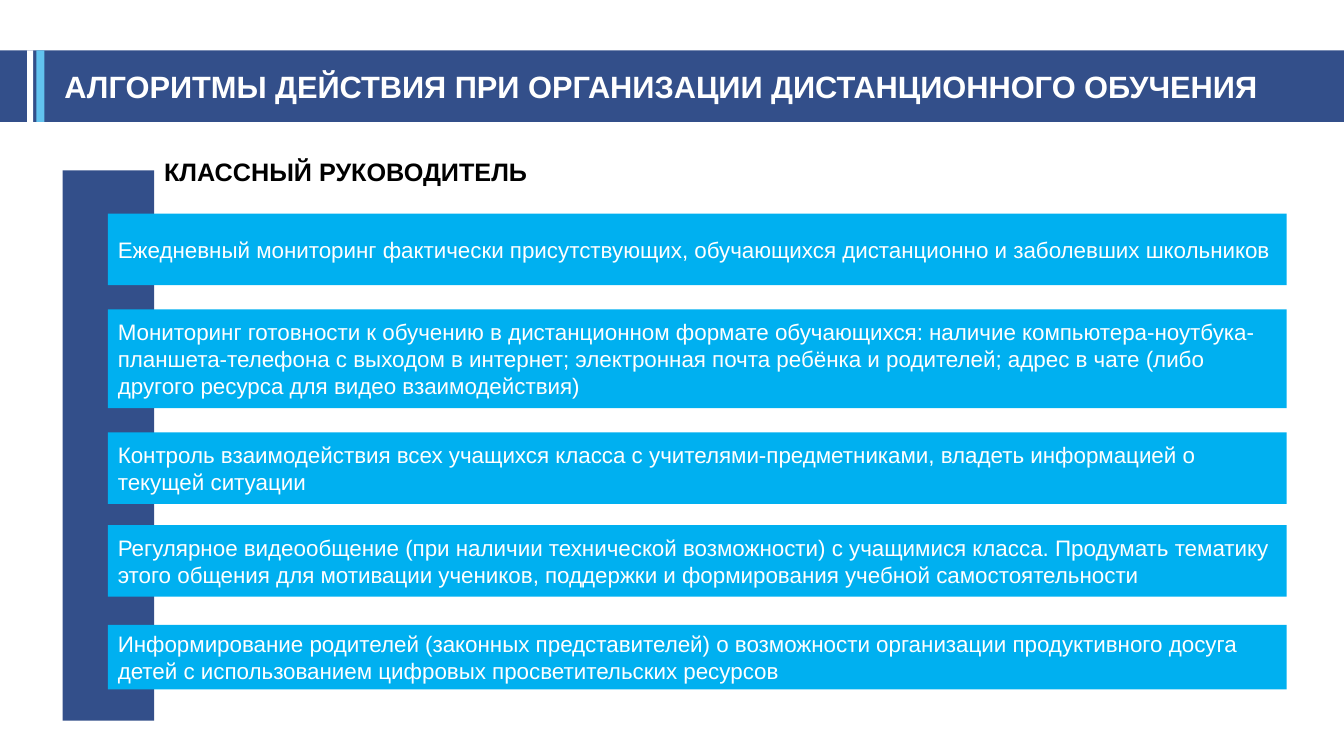
from dataclasses import dataclass
from typing import Optional

from pptx import Presentation
from pptx.dml.color import RGBColor
from pptx.enum.shapes import MSO_SHAPE as Shape
from pptx.enum.text import MSO_ANCHOR as Anchor, MSO_AUTO_SIZE as AutoSize, PP_ALIGN as Align
from pptx.util import Inches, Pt


@dataclass(frozen=True)
class Theme:
    font: str = "Arial"
    navy: RGBColor = RGBColor(0x33, 0x4F, 0x8A)
    accent: RGBColor = RGBColor(0x62, 0xC3, 0xEF)
    task: RGBColor = RGBColor(0x00, 0xB0, 0xF0)
    white: RGBColor = RGBColor(0xFF, 0xFF, 0xFF)
    black: RGBColor = RGBColor(0x00, 0x00, 0x00)
    title_size: int = 22
    role_size: int = 18
    task_size: int = 16


@dataclass(frozen=True)
class Block:
    left: float
    top: float
    width: float
    height: float
    color: RGBColor
    text: Optional[str] = None


THEME = Theme()
SLIDE_WIDTH = 13.33
BAND_TOP, BAND_HEIGHT = 0.5, 0.71
TASK_LEFT, TASK_WIDTH = 1.07, 11.69

BAND = Block(0, BAND_TOP, SLIDE_WIDTH, BAND_HEIGHT, THEME.navy)
STRIPES = [
    Block(0.36, BAND_TOP, 0.08, BAND_HEIGHT, THEME.accent),
    Block(0.27, BAND_TOP, 0.06, BAND_HEIGHT, THEME.white),
]
SPINE = Block(0.62, 1.69, 0.91, 5.46, THEME.navy)

# Top, height and wording of each task
TASKS = [
    (2.12, 0.71, "Ежедневный мониторинг фактически присутствующих, обучающихся "
                 "дистанционно и заболевших школьников"),
    (3.07, 0.98, "Мониторинг готовности к обучению в дистанционном формате обучающихся: "
                 "наличие компьютера-ноутбука-планшета-телефона с выходом в интернет; "
                 "электронная почта ребёнка и родителей; адрес в чате (либо другого "
                 "ресурса для видео взаимодействия)"),
    (4.29, 0.71, "Контроль взаимодействия всех учащихся класса с "
                 "учителями-предметниками, владеть информацией о текущей ситуации"),
    (5.21, 0.71, "Регулярное видеообщение (при наличии технической возможности) с "
                 "учащимися класса. Продумать тематику этого общения для мотивации "
                 "учеников, поддержки и формирования учебной самостоятельности"),
    (6.2, 0.64, "Информирование родителей (законных представителей) о возможности "
                "организации продуктивного досуга детей с использованием цифровых "
                "просветительских ресурсов"),
]


def write_text(shape, text: str, size: int, color: RGBColor, bold: bool = False,
               align: Align = Align.LEFT, wrap: bool = True,
               anchor: Anchor = Anchor.MIDDLE) -> None:
    frame = shape.text_frame
    frame.text = text
    frame_format = {"word_wrap": wrap, "vertical_anchor": anchor,
                    "auto_size": AutoSize.SHAPE_TO_FIT_TEXT}
    for name, value in frame_format.items():
        setattr(frame, name, value)
    paragraph = frame.paragraphs[0]
    paragraph.alignment = align
    font = paragraph.runs[0].font
    for name, value in {"name": THEME.font, "size": Pt(size), "bold": bold}.items():
        setattr(font, name, value)
    font.color.rgb = color


def draw_block(slide, block: Block) -> None:
    lengths = (block.left, block.top, block.width, block.height)
    rectangle = slide.shapes.add_shape(Shape.RECTANGLE, *map(Inches, lengths))
    rectangle.shadow.inherit = False
    rectangle.fill.solid()
    rectangle.fill.fore_color.rgb = block.color
    rectangle.line.fill.background()
    if block.text:
        write_text(rectangle, block.text, THEME.task_size, THEME.white)


def main() -> None:
    deck = Presentation()
    deck.slide_width, deck.slide_height = Inches(SLIDE_WIDTH), Inches(7.5)
    slide = deck.slides.add_slide(deck.slide_layouts[5])

    # Heading band with the title on top of it
    draw_block(slide, BAND)
    title = slide.shapes.title
    title.element.getparent().append(title.element)
    place = {"left": -0.22, "top": 0.62, "width": 13.55, "height": 0.47}
    for name, value in place.items():
        setattr(title, name, Inches(value))
    write_text(title, "АЛГОРИТМЫ ДЕЙСТВИЯ ПРИ ОРГАНИЗАЦИИ ДИСТАНЦИОННОГО ОБУЧЕНИЯ",
               THEME.title_size, THEME.white, bold=True, align=Align.CENTER)

    # Stripes, spine and task bars
    tasks = [Block(TASK_LEFT, top, TASK_WIDTH, height, THEME.task, text)
             for top, height, text in TASKS]
    for block in [*STRIPES, SPINE, *tasks]:
        draw_block(slide, block)

    # Role the tasks belong to
    role = slide.shapes.add_textbox(Inches(1.53), Inches(1.5), Inches(3.84), Inches(0.4))
    write_text(role, "КЛАССНЫЙ РУКОВОДИТЕЛЬ", THEME.role_size, THEME.black,
               bold=True, wrap=False, anchor=Anchor.TOP)

    deck.save("out.pptx")


if __name__ == "__main__":
    main()
